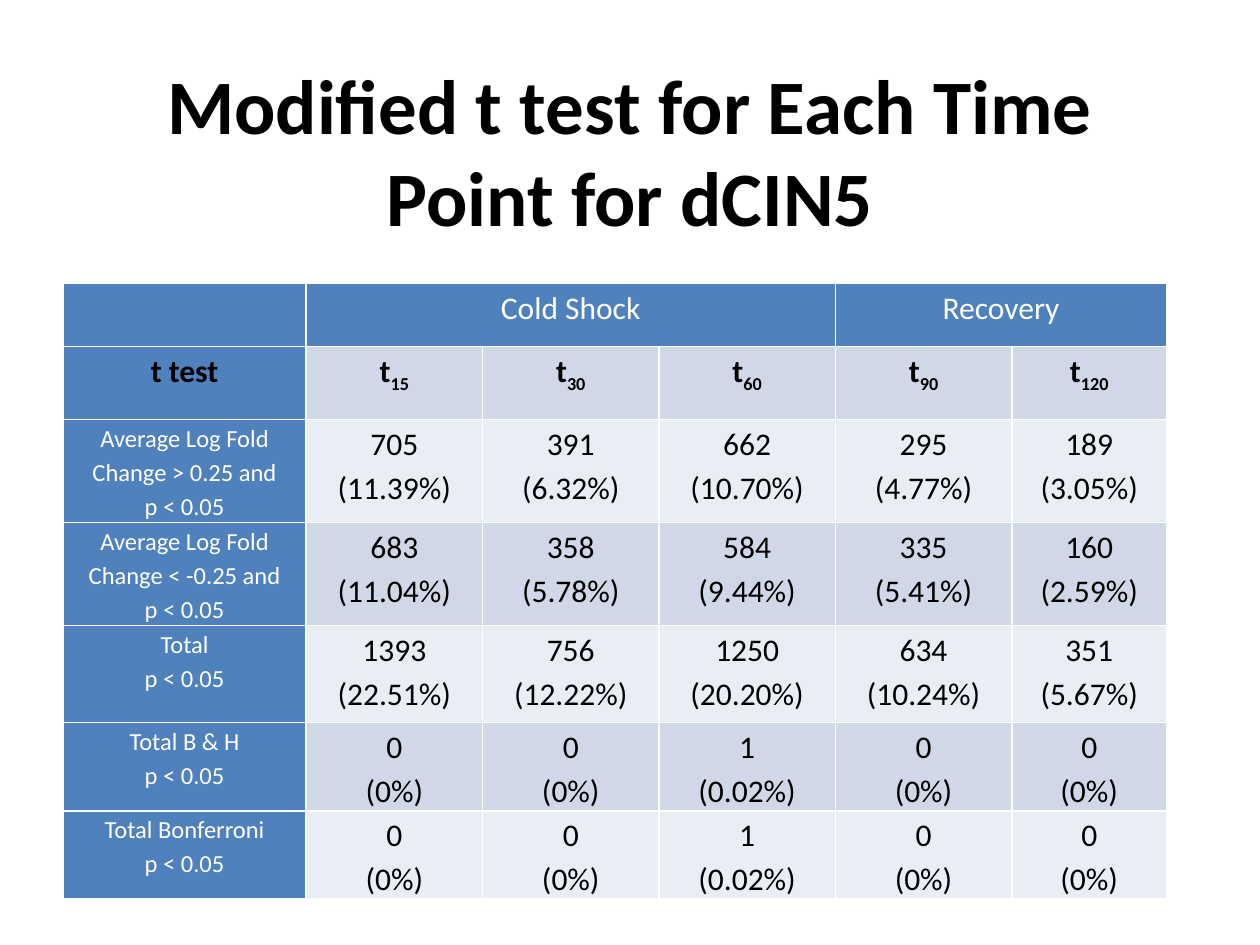
import pptx
import pptx.util
import pptx.dml.color
import pptx.enum.text

Inches, Pt = pptx.util.Inches, pptx.util.Pt
CENTER = pptx.enum.text.PP_ALIGN.CENTER
MIDDLE = pptx.enum.text.MSO_ANCHOR.MIDDLE
BLUE, WHITE, BLACK = "4F81BD", "FFFFFF", "000000"
BANDS = ["E9EDF4", "D0D8E8"]


def rgb(value):
    return pptx.dml.color.RGBColor.from_string(value)


def style(p, size, color, bold=False):
    p.alignment = CENTER
    for r in p.runs:
        r.font.name = "Calibri"
        r.font.size = Pt(size)
        r.font.bold = bold
        r.font.color.rgb = rgb(color)


prs = pptx.Presentation()
prs.slide_width, prs.slide_height = Inches(10), Inches(7.5)
s = prs.slides.add_slide(prs.slide_layouts[5])

title = s.shapes.title
title.left, title.top = Inches(0.5), Inches(0.3)
title.width, title.height = Inches(9), Inches(1.78)
tf = title.text_frame
tf.text = "Modified t test for Each Time Point for dCIN5"
tf.word_wrap = True
tf.auto_size = pptx.enum.text.MSO_AUTO_SIZE.NONE
tf.vertical_anchor = MIDDLE
style(tf.paragraphs[0], 44, BLACK, True)

rows = [
    ["", "Cold Shock", "", "", "Recovery", ""],
    ["t test", "t", "t", "t", "t", "t"],
    ["Average Log Fold Change > 0.25 and\np < 0.05", "705\n(11.39%)", "391\n(6.32%)",
     "662\n(10.70%)", "295\n(4.77%)", "189\n(3.05%)"],
    ["Average Log Fold Change < -0.25 and\np < 0.05", "683\n(11.04%)", "358\n(5.78%)",
     "584\n(9.44%)", "335\n(5.41%)", "160\n(2.59%)"],
    ["Total\np < 0.05", "1393\n(22.51%)", "756\n(12.22%)",
     "1250\n(20.20%)", "634\n(10.24%)", "351\n(5.67%)"],
    ["Total B & H\np < 0.05", "0\n(0%)", "0\n(0%)", "1\n(0.02%)", "0\n(0%)", "0\n(0%)"],
    ["Total Bonferroni\np < 0.05", "0\n(0%)", "0\n(0%)", "1\n(0.02%)", "0\n(0%)", "0\n(0%)"],
]
minutes = ["15", "30", "60", "90", "120"]
widths = [1.93, 1.4, 1.4, 1.4, 1.4, 1.23]
heights = [0.5, 0.58, 0.58, 0.58, 0.77, 0.58, 0.58]

table = s.shapes.add_table(len(rows), len(widths), Inches(0.5), Inches(2.25),
                           Inches(8.75), Inches(4.84)).table
for column, width in zip(table.columns, widths):
    column.width = Inches(width)
for row, height in zip(table.rows, heights):
    row.height = Inches(height)
table.cell(0, 1).merge(table.cell(0, 3))
table.cell(0, 4).merge(table.cell(0, 5))

for i, row in enumerate(rows):
    for j, text in enumerate(row):
        cell = table.cell(i, j)
        header = i == 0 or j == 0
        cell.fill.solid()
        cell.fill.fore_color.rgb = rgb(BLUE if header else BANDS[i % 2])
        cell.margin_left = cell.margin_right = Inches(0.07)
        cell.margin_top = cell.margin_bottom = 0
        if not text:
            continue
        cell.text_frame.text = text
        if i == 1 and j > 0:
            r = cell.text_frame.paragraphs[0].add_run()
            r.text = minutes[j - 1]
            r.font._element.set("baseline", "-25000")
        size = 14 if j == 0 and i > 1 else 18
        color = WHITE if header and i != 1 else BLACK
        for p in cell.text_frame.paragraphs:
            style(p, size, color, i == 1)
            p.line_spacing = 1.15

prs.save("out.pptx")
